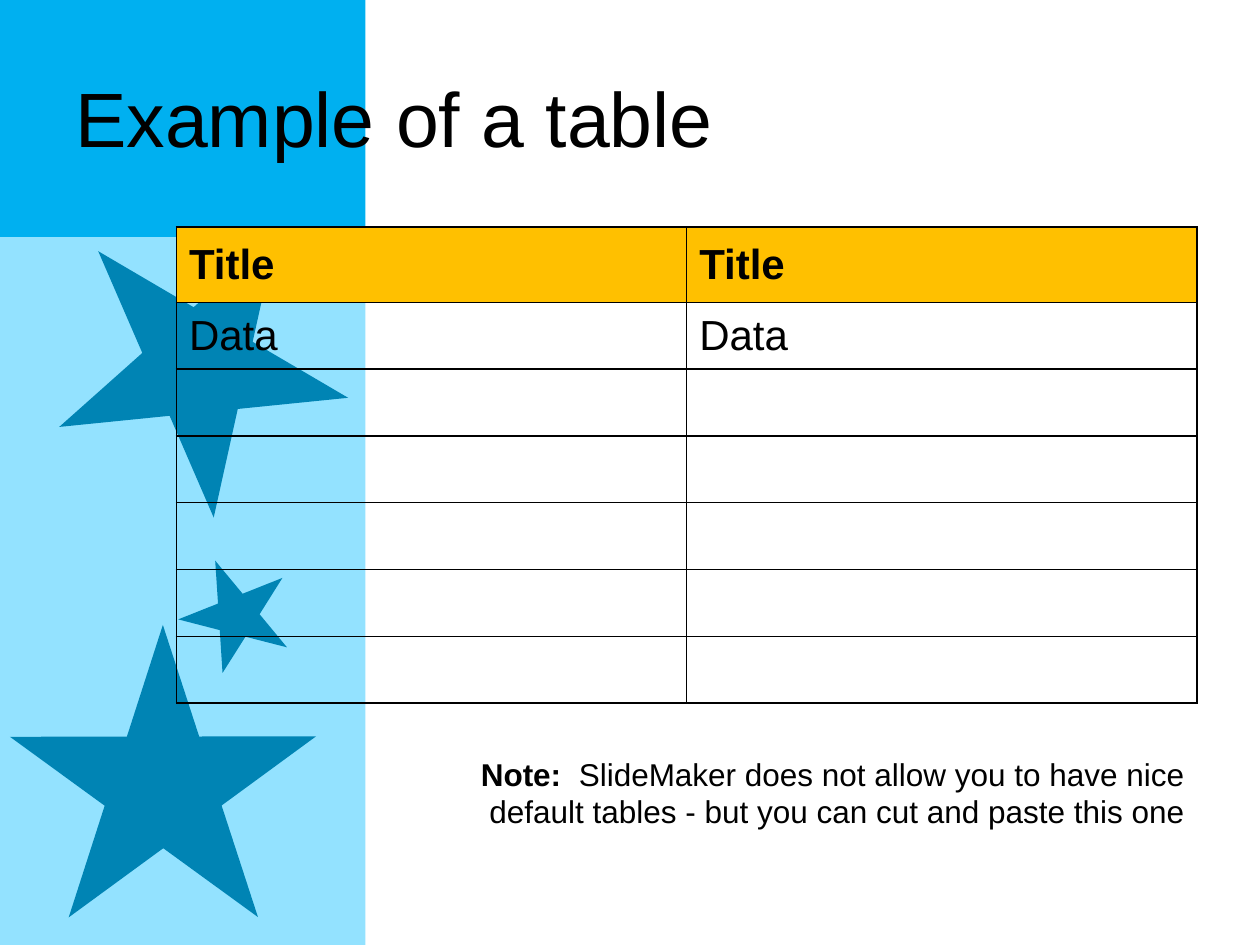
import pptx
import pptx.util
import pptx.dml.color
import pptx.enum.shapes
import pptx.enum.text
import pptx.oxml
import pptx.oxml.ns
import lxml.etree

Inches = pptx.util.Inches
SHAPE = pptx.enum.shapes.MSO_SHAPE
ANCHOR = pptx.enum.text.MSO_ANCHOR
COLORS = {"pale": "93E2FF", "star": "0084B4", "sky": "00B0F0",
          "gold": "FFC000", "black": "000000"}


def rgb(name):
    return pptx.dml.color.RGBColor.from_string(COLORS[name])


def set_font(p, size, bold=None):
    p.font.name = "Arial"
    p.font.size = pptx.util.Pt(size)
    p.font.color.rgb = rgb("black")
    p.font.bold = bold


prs = pptx.Presentation()
prs.slide_width, prs.slide_height = Inches(10), Inches(7.5)
s = prs.slides.add_slide(prs.slide_layouts[6])

decorations = [
    (SHAPE.RECTANGLE, 0, 1.88, 2.9, 5.62, 0, "pale"),
    (SHAPE.STAR_5_POINT, 1.42, 4.42, 0.89, 0.85, 338.3, "star"),
    (SHAPE.STAR_5_POINT, 0.49, 1.7, 2.3, 2.2, 30.4, "star"),
    (SHAPE.STAR_5_POINT, 0.08, 4.96, 2.43, 2.32, 359.9, "star"),
    (SHAPE.RECTANGLE, 0, 0, 2.9, 1.88, 0, "sky"),
]
for kind, x, y, w, h, angle, color in decorations:
    sp = s.shapes.add_shape(kind, Inches(x), Inches(y), Inches(w), Inches(h))
    sp.rotation = angle
    sp.shadow.inherit = False
    sp.fill.solid()
    sp.fill.fore_color.rgb = rgb(color)
    sp.line.fill.background()

title = s.shapes.add_textbox(Inches(0.5), Inches(0.3), Inches(9), Inches(1.25))
tf = title.text_frame
tf.word_wrap = True
tf.vertical_anchor = ANCHOR.MIDDLE
p = tf.paragraphs[0]
p.text = "Example of a table"
set_font(p, 44)

rows = [["Title", "Title"], ["Data", "Data"]] + [["", ""]] * 5
table = s.shapes.add_table(len(rows), 2, Inches(1.4), Inches(1.8),
                           Inches(8.1), Inches(3.76)).table
table.horz_banding = False
table.first_row = False
for i, texts in enumerate(rows):
    table.rows[i].height = Inches(0.53 if i else 0.6)
    for j, text in enumerate(texts):
        cell = table.cell(i, j)
        cell.vertical_anchor = ANCHOR.MIDDLE
        p = cell.text_frame.paragraphs[0]
        p.text = text
        set_font(p, 24, i == 0)
        tcPr = cell._tc.get_or_add_tcPr()
        for side in ("lnL", "lnR", "lnT", "lnB"):
            ln = lxml.etree.SubElement(tcPr, pptx.oxml.ns.qn("a:" + side), w="12700")
            fill = lxml.etree.SubElement(ln, pptx.oxml.ns.qn("a:solidFill"))
            lxml.etree.SubElement(fill, pptx.oxml.ns.qn("a:srgbClr"), val=COLORS["black"])
        if i == 0:
            cell.fill.solid()
            cell.fill.fore_color.rgb = rgb("gold")
        else:
            cell.fill.background()

note = s.shapes.add_textbox(Inches(3.62), Inches(5.94), Inches(5.88), Inches(0.71))
tf = note.text_frame
tf.word_wrap = True
tf.auto_size = pptx.enum.text.MSO_AUTO_SIZE.SHAPE_TO_FIT_TEXT
p = tf.paragraphs[0]
p.alignment = pptx.enum.text.PP_ALIGN.RIGHT
set_font(p, 18)
r = p.add_run()
r.text = "Note:  "
r.font.bold = True
r = p.add_run()
r.text = ("SlideMaker does not allow you to have nice default tables"
          " - but you can cut and paste this one")

prs.save("out.pptx")
